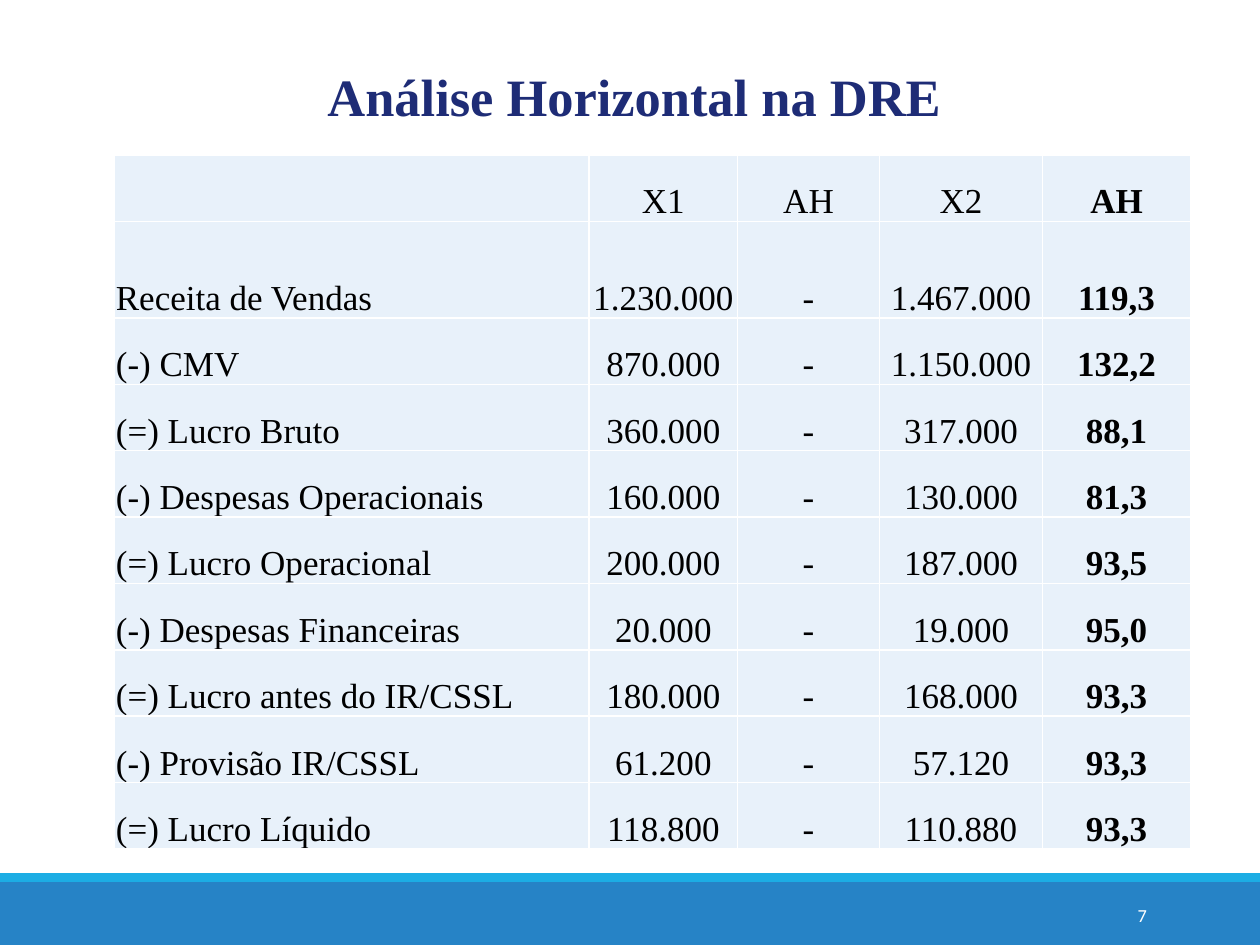
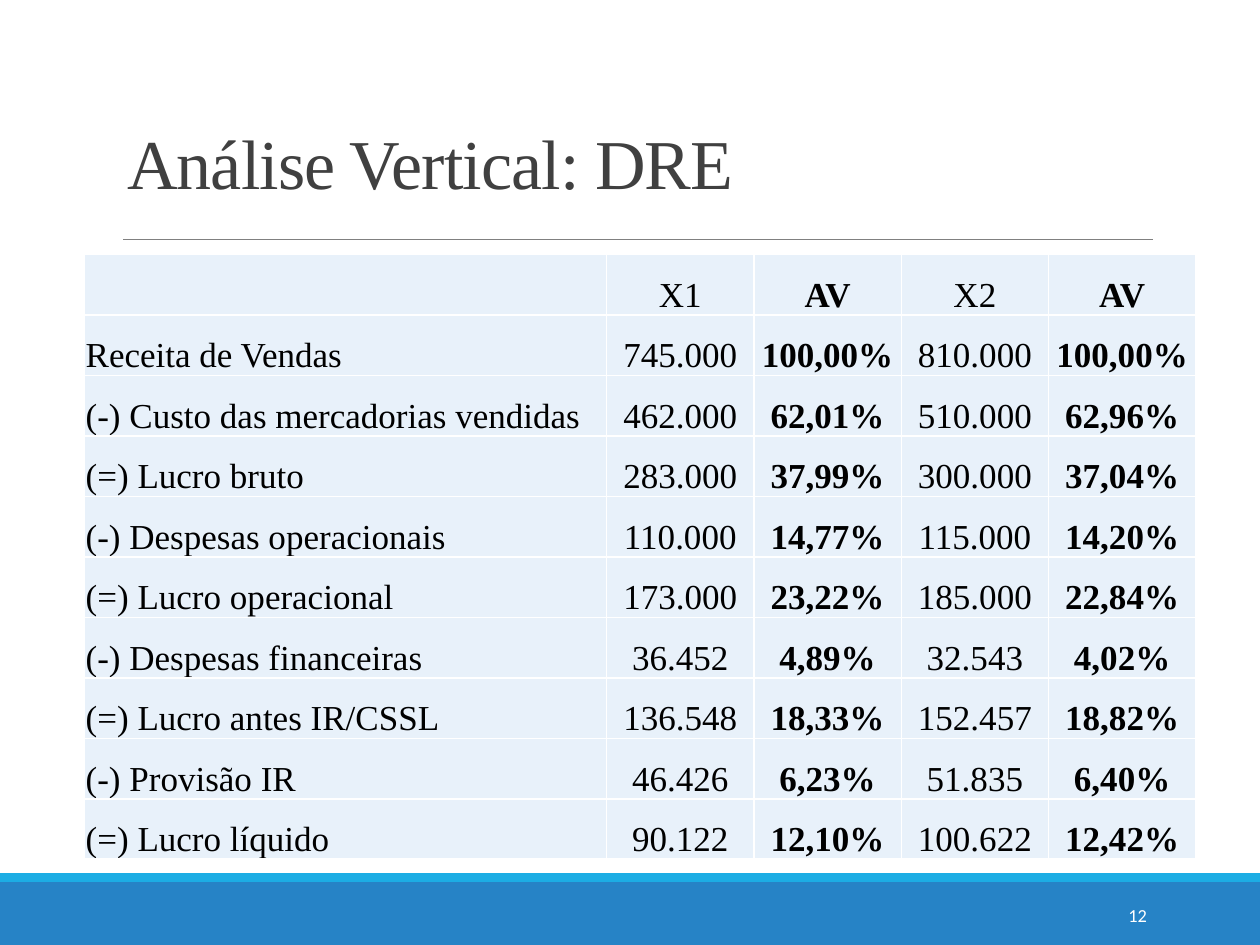
from dataclasses import dataclass
from typing import Any

from lxml import etree
from pptx import Presentation
from pptx.dml.color import RGBColor
from pptx.enum.shapes import MSO_CONNECTOR, MSO_SHAPE
from pptx.enum.text import MSO_ANCHOR, MSO_AUTO_SIZE, PP_ALIGN
from pptx.oxml.ns import qn
from pptx.util import Emu, Inches, Pt

LEFT, MID, RIGHT = PP_ALIGN.LEFT, PP_ALIGN.CENTER, PP_ALIGN.RIGHT
TOP, CENTER, BASE = MSO_ANCHOR.TOP, MSO_ANCHOR.MIDDLE, MSO_ANCHOR.BOTTOM
NO_FIT = MSO_AUTO_SIZE.NONE
RECT, STRAIGHT = MSO_SHAPE.RECTANGLE, MSO_CONNECTOR.STRAIGHT
TITLE_ONLY = 5

# The slide is a grid of 100 columns by 75 rows.
COLS, ROWS = 100, 75
WIDE, HIGH = Inches(10), Inches(7.5)


@dataclass(frozen=True)
class Theme:
    serif: str = "Times New Roman"
    sans: str = "Calibri"
    white: str = "FFFFFF"
    black: str = "000000"
    navy: str = "1E2C76"
    gray: str = "404040"
    rule: str = "808080"
    blue: str = "2683C6"
    cyan: str = "1CADE4"
    pale: str = "E8F1FA"
    head: float = 30
    big: float = 40
    body: float = 20
    small: float = 10.5
    hair: float = 0.5
    edge: float = 1


THEME = Theme()


@dataclass(frozen=True)
class Box:
    """A place on the grid, in columns and rows."""
    x: float
    y: float
    w: float
    h: float

    def emu(self) -> tuple[Emu, Emu, Emu, Emu]:
        return across(self.x), down(self.y), across(self.w), down(self.h)


@dataclass(frozen=True)
class Style:
    size: float
    color: str
    font: str = THEME.serif
    bold: bool = False
    align: Any = LEFT
    anchor: Any = BASE
    lead: float = 1.0
    track: int = 0


@dataclass(frozen=True)
class Band:
    box: Box
    color: str


@dataclass(frozen=True)
class Sheet:
    """A table: its place, column and row sizes, bold columns and lines."""
    x: float
    y: float
    cols: list[float]
    rows: list[float]
    bold: set[int]
    data: str


@dataclass(frozen=True)
class Page:
    number: int
    title: str
    box: Box
    style: Style
    sheet: Sheet
    ruled: bool


BANDS = [Band(Box(0, 70, COLS, 5), THEME.blue),
         Band(Box(0, 69.3, COLS, 0.7), THEME.cyan)]
FOLIO = Box(81.2, 70.6, 10.8, 4)
RULE = Box(9.8, 19, 81.7, 0)
SMALL = Style(THEME.small, THEME.white, THEME.sans, align=RIGHT, anchor=CENTER)
INSET = {"margin_left": Inches(0.01), "margin_right": Inches(0.01),
         "margin_top": Inches(0.01), "margin_bottom": 0}

GROWTH = """|X1|AH|X2|AH
Receita de Vendas|1.230.000|-|1.467.000|119,3
(-) CMV|870.000|-|1.150.000|132,2
(=) Lucro Bruto|360.000|-|317.000|88,1
(-) Despesas Operacionais|160.000|-|130.000|81,3
(=) Lucro Operacional|200.000|-|187.000|93,5
(-) Despesas Financeiras|20.000|-|19.000|95,0
(=) Lucro antes do IR/CSSL|180.000|-|168.000|93,3
(-) Provisão IR/CSSL|61.200|-|57.120|93,3
(=) Lucro Líquido|118.800|-|110.880|93,3"""

SHARE = """|X1|AV|X2|AV
Receita de Vendas|745.000|100,00%|810.000|100,00%
(-) Custo das mercadorias vendidas|462.000|62,01%|510.000|62,96%
(=) Lucro bruto|283.000|37,99%|300.000|37,04%
(-) Despesas operacionais|110.000|14,77%|115.000|14,20%
(=) Lucro operacional|173.000|23,22%|185.000|22,84%
(-) Despesas financeiras|36.452|4,89%|32.543|4,02%
(=) Lucro antes IR/CSSL|136.548|18,33%|152.457|18,82%
(-) Provisão IR|46.426|6,23%|51.835|6,40%
(=) Lucro líquido|90.122|12,10%|100.622|12,42%"""

PAGES = [
    Page(7, "Análise Horizontal na DRE", Box(5.8, 2.1, 89.1, 8.6),
         Style(THEME.head, THEME.navy, bold=True, align=MID, anchor=TOP,
               lead=1.5),
         Sheet(9.1, 12.3, [37.65, 11.8, 11.25, 12.95, 11.75],
               [5.27, 7.67] + [5.27] * 8, {4}, GROWTH), False),
    Page(12, "Análise Vertical: DRE", Box(9.1, 6, 82.5, 10.7),
         Style(THEME.big, THEME.gray, lead=0.85, track=-50),
         Sheet(6.7, 20.2, [41.45] + [11.69] * 4, [4.8] * 10, {2, 4}, SHARE),
         True),
]


def across(cols: float) -> Emu:
    return Emu(round(WIDE * cols / COLS))


def down(rows: float) -> Emu:
    return Emu(round(HIGH * rows / ROWS))


def paint(obj: Any, values: dict[str, Any]) -> None:
    """Set each named attribute of obj."""
    for name, value in values.items():
        setattr(obj, name, value)


def fill(obj: Any, color: str) -> None:
    obj.fill.solid()
    obj.fill.fore_color.rgb = RGBColor.from_string(color)


def write(frame: Any, text: str, style: Style) -> None:
    para = frame.paragraphs[0]
    paint(para, {"alignment": style.align, "line_spacing": style.lead})
    run = para.add_run()
    run.text = text
    paint(run.font, {"name": style.font, "size": Pt(style.size),
                     "bold": style.bold})
    run.font.color.rgb = RGBColor.from_string(style.color)
    if style.track:
        run.font._element.set("spc", str(style.track))


def place(shape: Any, box: Box, text: str, style: Style) -> None:
    """Move a text shape to its box and fill it with text."""
    paint(shape, dict(zip(("left", "top", "width", "height"), box.emu())))
    paint(shape.text_frame, {"word_wrap": True, "auto_size": NO_FIT,
                             "vertical_anchor": style.anchor})
    write(shape.text_frame, text, style)


def draw_band(slide: Any, band: Band) -> None:
    shape = slide.shapes.add_shape(RECT, *band.box.emu())
    shape.shadow.inherit = False
    fill(shape, band.color)
    shape.line.fill.background()


def draw_rule(slide: Any, box: Box) -> None:
    x, y, w, h = box.emu()
    line = slide.shapes.add_connector(STRAIGHT, x, y, x + w, y + h)
    line.line.width = Pt(THEME.hair)
    line.line.color.rgb = RGBColor.from_string(THEME.rule)
    etree.SubElement(line._element.spPr, qn("a:effectLst"))


def edge(cell: Any) -> None:
    """Draw all four cell borders; they come before the fill in the XML."""
    props = cell._tc.get_or_add_tcPr()
    for spot, side in enumerate(("lnL", "lnR", "lnT", "lnB")):
        line = etree.Element(qn(f"a:{side}"), w=str(Pt(THEME.edge)))
        solid = etree.SubElement(line, qn("a:solidFill"))
        etree.SubElement(solid, qn("a:srgbClr"), val=THEME.white)
        props.insert(spot, line)


def draw_sheet(slide: Any, sheet: Sheet) -> None:
    box = Box(sheet.x, sheet.y, sum(sheet.cols), sum(sheet.rows))
    table = slide.shapes.add_table(len(sheet.rows), len(sheet.cols),
                                   *box.emu()).table
    paint(table, {"first_row": False, "horz_banding": False})
    for col, size in zip(table.columns, sheet.cols):
        col.width = across(size)
    for row, size in zip(table.rows, sheet.rows):
        row.height = down(size)
    for r, line in enumerate(sheet.data.splitlines()):
        for c, text in enumerate(line.split("|")):
            cell = table.cell(r, c)
            paint(cell, INSET | {"vertical_anchor": BASE})
            fill(cell, THEME.pale)
            edge(cell)
            if text:
                write(cell.text_frame, text,
                      Style(THEME.body, THEME.black, bold=c in sheet.bold,
                            align=MID if c else LEFT))


def draw_page(deck: Any, page: Page) -> None:
    slide = deck.slides.add_slide(deck.slide_layouts[TITLE_ONLY])
    for band in BANDS:
        draw_band(slide, band)
    if page.ruled:
        draw_rule(slide, RULE)
    place(slide.shapes.title, page.box, page.title, page.style)
    folio = slide.shapes.add_textbox(*FOLIO.emu())
    place(folio, FOLIO, str(page.number), SMALL)
    draw_sheet(slide, page.sheet)


def main() -> None:
    deck = Presentation()
    paint(deck, {"slide_width": WIDE, "slide_height": HIGH})
    for page in PAGES:
        draw_page(deck, page)
    deck.save("out.pptx")


if __name__ == "__main__":
    main()
